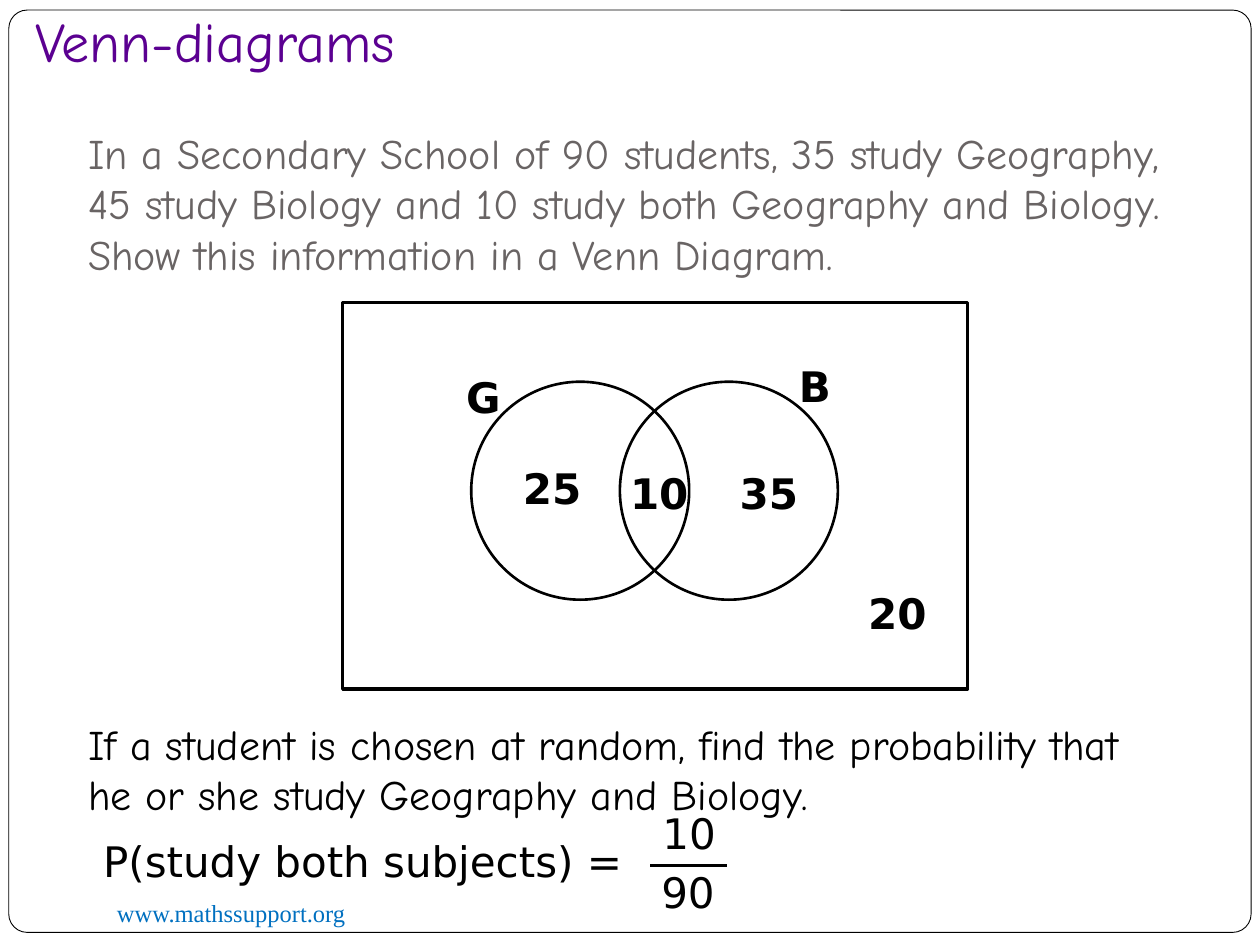
import pptx
import pptx.util
import pptx.dml.color
import pptx.enum.shapes
import pptx.enum.text
import pptx.oxml
from dataclasses import dataclass

Inches = pptx.util.Inches
Pt = pptx.util.Pt
KINDS = pptx.enum.shapes.MSO_SHAPE
ANCHOR = pptx.enum.text.MSO_ANCHOR


@dataclass(frozen=True)
class Theme:
    ink: str = "000000"
    paper: str = "FFFFFF"
    head: str = "5B0091"
    task: str = "696464"
    site: str = "0070C0"
    hand: str = "Comic Neue"
    sans: str = "DejaVu Sans"
    serif: str = "Times New Roman"
    big: int = 32
    body: int = 24
    small: int = 14


THEME = Theme()


def color(code):
    return pptx.dml.color.RGBColor.from_string(code)


def add_text(slide, box, lines, font, size=THEME.body, tint=THEME.ink,
             bold=False, side=0.1, foot=0.05, anchor=ANCHOR.TOP):
    """Add a wrapped text box; lines are parted by line breaks."""
    frame = slide.shapes.add_textbox(*map(Inches, box)).text_frame
    frame.word_wrap = True
    frame.vertical_anchor = anchor
    frame.margin_left = frame.margin_right = Inches(side)
    frame.margin_top, frame.margin_bottom = Inches(0.05), Inches(foot)
    para = frame.paragraphs[0]
    for i, line in enumerate(lines):
        if i:
            para.add_line_break()
        run = para.add_run()
        run.text = line
        run.font.name = font
        run.font.size = Pt(size)
        run.font.bold = bold
        run.font.color.rgb = color(tint)


def add_shape(slide, kind, box, width, fill=None):
    """Add an outlined shape, hollow unless a fill is given."""
    shape = slide.shapes.add_shape(kind, *map(Inches, box))
    shape.shadow.inherit = False
    if fill:
        shape.fill.solid()
        shape.fill.fore_color.rgb = color(fill)
    else:
        shape.fill.background()
    shape.line.color.rgb = color(THEME.ink)
    shape.line.width = Pt(width)
    return shape


def add_line(slide, start, end, width):
    line = slide.shapes.add_connector(
        pptx.enum.shapes.MSO_CONNECTOR.STRAIGHT,
        *map(Inches, start + end))
    line.line.color.rgb = color(THEME.ink)
    line.line.width = Pt(width)
    props = line._element.spPr
    props.append(pptx.oxml.parse_xml(
        '<a:effectLst xmlns:a='
        '"http://schemas.openxmlformats.org/drawingml/2006/main"/>'))


def add_venn(slide):
    # Universal set and the two circles
    add_shape(slide, KINDS.RECTANGLE, (2.72, 2.4, 4.96, 3.07), 2)
    for left in (3.74, 4.92):
        add_shape(slide, KINDS.OVAL, (left, 3.03, 1.73, 1.73), 1.5)

    # Set names and counts
    labels = (("G", 3.7, 2.9), ("B", 6.34, 2.81), ("25", 4.15, 3.62),
              ("10", 5, 3.66), ("35", 5.87, 3.66), ("20", 6.89, 4.61))
    for label, left, top in labels:
        add_text(slide, (left, top, 0.55, 0.4), [label], THEME.sans,
                 bold=True, side=0)


def add_answer(slide):
    add_text(slide, (0.72, 6.58, 4.44, 0.5), ["P(study both subjects) ="],
             THEME.sans)
    # Fraction
    for part, left, top in (("10", 5.16, 6.36), ("90", 5.15, 6.83)):
        add_text(slide, (left, top, 0.67, 0.5), [part], THEME.sans)
    add_line(slide, (5.16, 6.87), (5.77, 6.87), 1.75)


def main():
    deck = pptx.Presentation()
    deck.slide_width, deck.slide_height = Inches(10), Inches(7.5)
    slide = deck.slides.add_slide(deck.slide_layouts[6])

    # Page frame and site address
    frame = add_shape(slide, KINDS.ROUNDED_RECTANGLE,
                      (0.07, 0.08, 9.86, 7.32), 0.5, THEME.paper)
    frame.adjustments[0] = 0.02
    add_text(slide, (0.83, 7.08, 3.25, 0.34), ["www.mathssupport.org"],
             THEME.serif, THEME.small, THEME.site)

    # Heading and task
    add_text(slide, (0.18, 0, 8.5, 0.67), ["Venn-diagrams"],
             THEME.hand, THEME.big, THEME.head)
    add_text(slide, (0.6, 0.68, 9.12, 1.63),
             ["In a Secondary School of 90 students, 35 study Geography, "
              "45 study Biology and 10 study both Geography and Biology.",
              "Show this information in a Venn Diagram."],
             THEME.hand, tint=THEME.task, foot=0.1, anchor=ANCHOR.BOTTOM)

    add_venn(slide)

    # Question and answer
    add_text(slide, (0.6, 5.65, 8.75, 0.91),
             ["If a student is chosen at random, find the probability that "
              "he or she study Geography and Biology."], THEME.hand)
    add_answer(slide)

    deck.save("out.pptx")


if __name__ == "__main__":
    main()
